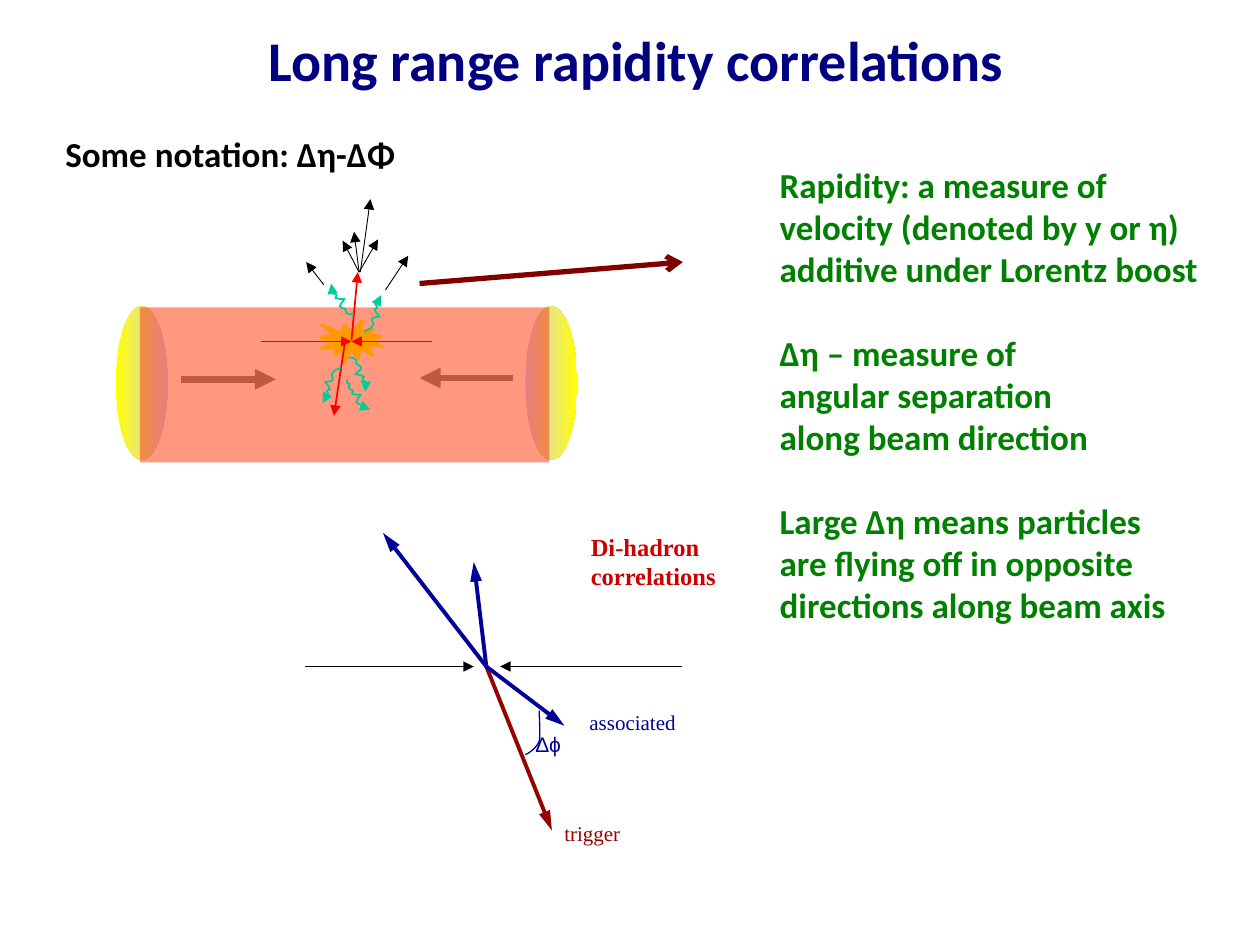
"""Build a slide on long range rapidity correlations."""
from math import cos, radians, sin

from lxml.etree import SubElement
from pptx import Presentation
from pptx.dml.color import RGBColor
from pptx.enum.shapes import MSO_CONNECTOR, MSO_SHAPE
from pptx.enum.text import MSO_ANCHOR, PP_ALIGN
from pptx.oxml.ns import qn
from pptx.util import Inches, Pt

COLORS = {name: RGBColor.from_string(value) for name, value in {
    "title": "000080", "notes": "008000", "black": "000000",
    "associated": "000099", "trigger": "990000", "heading": "CC0000",
    "yellow": "FFFF00", "lilac": "CCCCFF", "beam": "808080", "tube": "FF3300",
    "burst": "FF9900", "parton": "FF0000", "gluon": "00CC99", "pointer": "800000",
}.items()}

presentation = Presentation()
presentation.slide_width, presentation.slide_height = Inches(10), Inches(7.5)
slide = presentation.slides.add_slide(presentation.slide_layouts[6])


def add_text(shapes, box, lines, font_name, size, color, bold=False, wrap=True):
    text_box = shapes.add_textbox(*map(Inches, box))
    frame = text_box.text_frame
    frame.word_wrap = wrap
    frame.text = "\n".join(lines)
    for paragraph in frame.paragraphs:
        font = paragraph.font
        font.name, font.size, font.bold = font_name, Pt(size), bold
        font.color.rgb = COLORS[color]
    return frame


def add_arrow(shapes, start, end, color, width, head="triangle", length="med"):
    arrow = shapes.add_connector(MSO_CONNECTOR.STRAIGHT, *map(Inches, (*start, *end)))
    arrow.line.color.rgb = COLORS[color]
    arrow.line.width = Pt(width)
    properties = arrow._element.spPr
    SubElement(properties.find(qn("a:ln")), qn("a:tailEnd"), type=head, w="med", len=length)
    SubElement(properties, qn("a:effectLst"))


title = add_text(slide.shapes, (0.05, -0.16, 10, 1.25), ["Long range rapidity correlations"],
                 "Calibri", 32, "title", True)
title.vertical_anchor = MSO_ANCHOR.MIDDLE
title.paragraphs[0].alignment = PP_ALIGN.CENTER

dihadron = slide.shapes.add_group_shape().shapes
collision = slide.shapes.add_group_shape().shapes

vertex = (3.86, 5.29)
for end, color in [((4.38, 6.59), "trigger"), ((4.48, 5.76), "associated"),
                   ((3.04, 4.23), "associated"), ((3.76, 4.46), "associated")]:
    add_arrow(dihadron, vertex, end, color, 2.25, length="lg")
for start, end in [(2.42, 3.76), (5.41, 3.97)]:
    add_arrow(dihadron, (start, 5.29), (end, 5.29), "black", 0.75)

for box, label, font_name, color in [
    ((4.58, 5.58, 1.77, 0.3), "associated", "Times New Roman", "associated"),
    ((4.15, 5.76, 1.03, 0.3), "Δϕ", "Arial", "associated"),
    ((4.38, 6.46, 1.19, 0.3), "trigger", "Times New Roman", "trigger"),
]:
    add_text(dihadron, box, [label], font_name, 12, color)
add_text(dihadron, (4.59, 4.17, 2.32, 0.57), ["Di-hadron", "correlations"],
         "Times New Roman", 14, "heading", True)

for left, stops in [(4.17, ("lilac", "yellow")), (0.92, ("yellow", "lilac"))]:
    nucleus = collision.add_shape(MSO_SHAPE.OVAL, *map(Inches, (left, 2.43, 0.41, 1.22)))
    nucleus.shadow.inherit = False
    nucleus.line.fill.background()
    nucleus.fill.gradient()
    nucleus.fill.gradient_angle = 0
    for stop, color in zip(nucleus.fill.gradient_stops, stops):
        stop.color.rgb = COLORS[color]
for start, end in [((1.44, 3.01), (2.19, 3.01)), ((4.07, 3), (3.33, 3))]:
    add_arrow(collision, start, end, "beam", 4)

tube = collision.add_shape(MSO_SHAPE.RECTANGLE, *map(Inches, (1.11, 2.44, 3.25, 1.23)))
burst = collision.add_shape(MSO_SHAPE.EXPLOSION1, *map(Inches, (2.54, 2.54, 0.5, 0.34)))
for shape, color in [(tube, "tube"), (burst, "burst")]:
    shape.shadow.inherit = False
    shape.fill.solid()
    shape.fill.fore_color.rgb = COLORS[color]
tube.line.fill.background()
SubElement(tube._element.spPr.find(".//" + qn("a:srgbClr")), qn("a:alpha"), val="50000")
burst.line.color.rgb = COLORS["burst"]
burst.line.width = Pt(1.25)

for start, end in [((2.07, 2.71), (2.79, 2.71)), ((3.43, 2.71), (2.79, 2.71)),
                   ((2.74, 2.7), (2.65, 3.3)), ((2.79, 2.7), (2.84, 2.16))]:
    add_arrow(collision, start, end, "parton", 1)
for start, end in [((2.86, 2.16), (2.94, 1.58)), ((2.85, 2.16), (3, 1.9)),
                   ((2.85, 2.16), (2.72, 1.91)), ((2.85, 2.16), (2.81, 1.84)),
                   ((2.57, 2.26), (2.43, 2.08)), ((3.06, 2.3), (3.24, 2.03))]:
    add_arrow(collision, start, end, "black", 0.5)

right_wave = [
    (0, 0), (0.03, 0), (0.05, 0), (0.06, 0.02), (0.05, 0.07), (0.07, 0.04), (0.1, 0.08),
    (0.09, 0.1), (0.07, 0.11), (0.05, 0.13), (0.08, 0.13), (0.09, 0.14), (0.12, 0.15),
    (0.11, 0.17), (0.09, 0.17), (0.13, 0.19), (0.14, 0.21), (0.13, 0.21), (0.12, 0.23),
    (0.16, 0.24), (0.13, 0.25), (0.13, 0.27)]
left_wave = [
    (0, 0), (0.02, 0.02), (-0.05, 0.02), (-0.05, 0.04), (-0.09, 0.07), (-0.05, 0.07),
    (-0.06, 0.11), (-0.08, 0.12), (-0.1, 0.12), (-0.12, 0.12), (-0.1, 0.14), (-0.09, 0.16),
    (-0.08, 0.18), (-0.1, 0.19), (-0.12, 0.18), (-0.09, 0.22), (-0.1, 0.24), (-0.11, 0.24),
    (-0.13, 0.24), (-0.1, 0.28), (-0.13, 0.27), (-0.14, 0.29)]
angle_arc = [(0, 0), (0, 0.09), (0.01, 0.18), (0, 0.24), (-0.02, 0.3), (-0.09, 0.34), (-0.11, 0.35)]
for shapes, controls, (left, top), turn, color, width, arrow_end in [
    (dihadron, angle_arc, (4.28, 5.64), 0, "associated", 0.75, None),
    (collision, right_wave, (2.77, 2.84), 0, "gluon", 1, "a:tailEnd"),
    (collision, left_wave, (2.7, 2.91), 0, "gluon", 1, "a:tailEnd"),
    (collision, right_wave, (2.94, 3.25), 168.7, "gluon", 1, "a:headEnd"),
    (collision, right_wave, (2.81, 2.49), 168.7, "gluon", 1, "a:tailEnd"),
    (collision, left_wave, (2.9, 2.64), 177, "gluon", 1, "a:tailEnd"),
]:
    cosine, sine = cos(radians(turn)), sin(radians(turn))
    points = [(Inches(left + x * cosine - y * sine), Inches(top + x * sine + y * cosine))
              for x, y in controls]
    builder = shapes.build_freeform(*points[0])
    builder.add_line_segments(points[1:], close=False)
    curve = builder.convert_to_shape()
    outline = curve._element.spPr.find(".//" + qn("a:path"))
    segments = outline.findall(qn("a:lnTo"))
    for first in range(0, len(segments), 3):
        bezier = SubElement(outline, qn("a:cubicBezTo"))
        for segment in segments[first:first + 3]:
            bezier.append(segment[0])
            outline.remove(segment)
    curve.shadow.inherit = False
    curve.fill.background()
    curve.line.color.rgb = COLORS[color]
    curve.line.width = Pt(width)
    if arrow_end:
        SubElement(curve._element.spPr.find(qn("a:ln")), qn(arrow_end), type="triangle")

add_arrow(slide.shapes, (3.33, 2.25), (5.42, 2.08), "pointer", 3, head="arrow")
add_text(slide.shapes, (0.42, 1, 3.08, 0.44), ["Some notation: Δη-ΔΦ"],
         "Calibri", 20, "black", True)
notes = add_text(slide.shapes, (6.09, 1.25, 3.57, 3.8), [
    "Rapidity: a measure of", "velocity (denoted by y or η)", "additive under Lorentz boost",
    "Δη – measure of", "angular separation", "along beam direction",
    "Large Δη means particles", "are flying off in opposite", "directions along beam axis",
], "Calibri", 20, "notes", True, wrap=False)
for paragraph in notes.paragraphs[3::3]:
    paragraph.space_before = Pt(24)

presentation.save("out.pptx")
